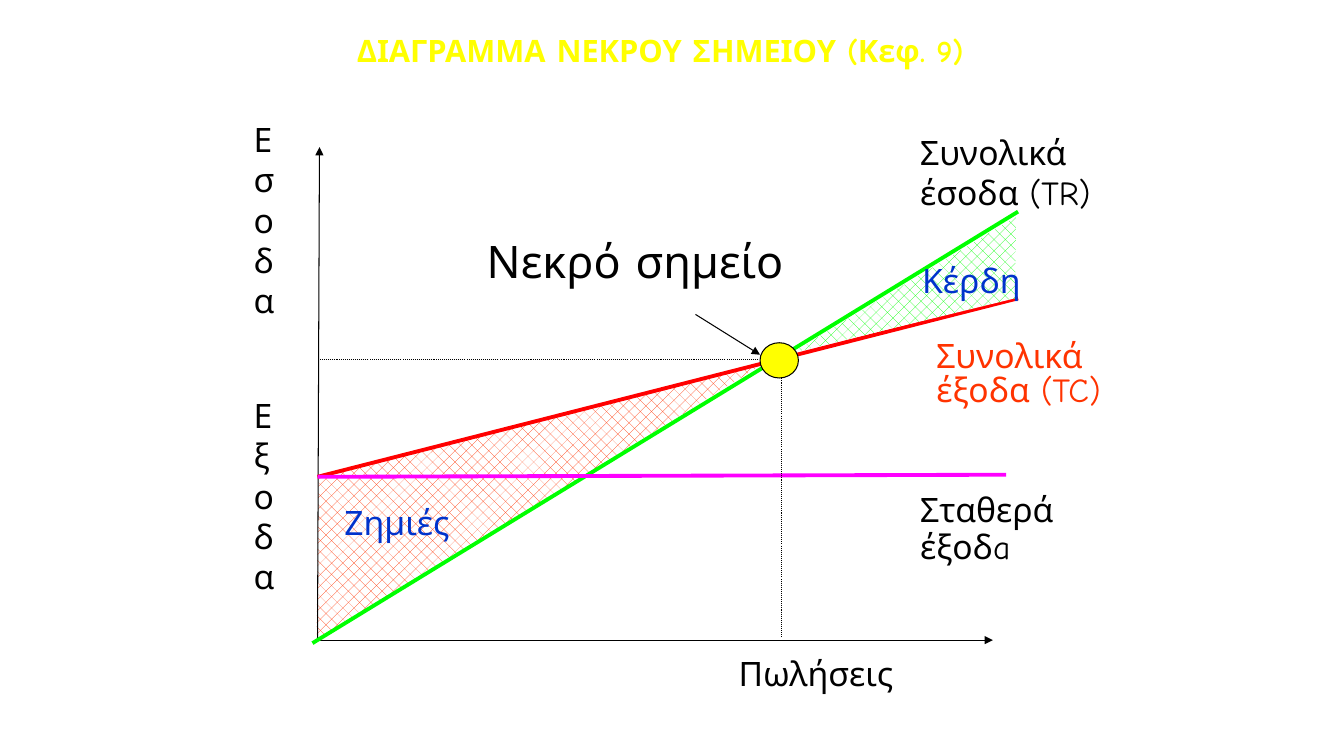
"""Break-even chart slide with revenue, cost and fixed-cost lines."""
from lxml.etree import SubElement
from pptx import Presentation
from pptx.dml.color import RGBColor
from pptx.enum.dml import MSO_LINE, MSO_PATTERN
from pptx.enum.shapes import MSO_CONNECTOR, MSO_SHAPE
from pptx.enum.text import MSO_ANCHOR, MSO_AUTO_SIZE, PP_ALIGN
from pptx.oxml.ns import qn
from pptx.util import Pt

FONT = "Comic Neue"
BLACK, BLUE, YELLOW = "000000", "0033CC", "FFFF00"
RED, GREEN, MAGENTA, ORANGE = "FF0000", "00FF00", "FF00FF", "FF3300"
FRAME_FORMAT = {
    "word_wrap": True,
    "auto_size": MSO_AUTO_SIZE.SHAPE_TO_FIT_TEXT,
    "vertical_anchor": MSO_ANCHOR.TOP,
    "margin_left": Pt(7.2),
    "margin_right": Pt(7.2),
    "margin_top": Pt(3.6),
    "margin_bottom": Pt(3.6),
}


def rgb(hex_value):
    """Turn a hex string into a colour."""
    return RGBColor.from_string(hex_value)


def apply_format(target, values):
    """Set each named attribute on the target."""
    for name, value in values.items():
        setattr(target, name, value)


def place(shape, box):
    """Move and size a shape to a box given in points."""
    edges = ("left", "top", "width", "height")
    apply_format(shape, {edge: Pt(value) for edge, value in zip(edges, box)})


def write(shape, lines, size, color, bold=False, spacing=None, gap=0):
    """Write lines of text, spacing every line after the first."""
    frame = shape.text_frame
    apply_format(frame, FRAME_FORMAT)
    for index, line in enumerate(lines):
        paragraph = frame.add_paragraph() if index else frame.paragraphs[0]
        apply_format(paragraph, {
            "alignment": PP_ALIGN.LEFT,
            "line_spacing": spacing if index else None,
            "space_before": Pt(gap if index else 0),
        })
        run = paragraph.add_run()
        run.text = line
        apply_format(run.font, {"name": FONT, "size": Pt(size), "bold": bold})
        run.font.color.rgb = rgb(color)


def add_title(slide, text, box):
    """Place and fill the title placeholder."""
    title = slide.shapes.title
    place(title, box)
    write(title, [text], 22, YELLOW, bold=True)


def add_label(slide, lines, box, color=BLACK, size=24, **paragraph_format):
    """Add a text label."""
    label = slide.shapes.add_textbox(*map(Pt, box))
    write(label, lines, size, color, **paragraph_format)


def add_line(slide, start, end, color=BLACK, width=0.75, dash=None, arrow=False):
    """Add a straight line, optionally dotted or with an arrowhead."""
    line = slide.shapes.add_connector(
        MSO_CONNECTOR.STRAIGHT, *map(Pt, (*start, *end)))
    line.line.color.rgb = rgb(color)
    apply_format(line.line, {"width": Pt(width), "dash_style": dash})
    if arrow:
        SubElement(line.line._get_or_add_ln(), qn("a:tailEnd"), type="triangle")
    SubElement(line._element.spPr, qn("a:effectLst"))


def add_area(slide, corners, color):
    """Add a hatched area between two lines."""
    first, *rest = [tuple(map(Pt, corner)) for corner in corners]
    builder = slide.shapes.build_freeform(*first)
    builder.add_line_segments(rest, close=True)
    area = builder.convert_to_shape()
    area.shadow.inherit = False
    area.fill.patterned()
    area.fill.pattern = MSO_PATTERN.PERCENT_25
    area.fill.fore_color.rgb = rgb(color)
    area.fill.back_color.rgb = rgb("FFFFFF")
    area.line.fill.background()


def add_marker(slide, box):
    """Add the break-even marker."""
    marker = slide.shapes.add_shape(MSO_SHAPE.OVAL, *map(Pt, box))
    marker.shadow.inherit = False
    marker.fill.solid()
    marker.fill.fore_color.rgb = rgb(YELLOW)
    marker.line.color.rgb = rgb(BLACK)
    marker.line.width = Pt(0.75)


def main():
    """Build and save the slide."""
    deck = Presentation()
    apply_format(deck, {"slide_width": Pt(960), "slide_height": Pt(540)})
    slide = deck.slides.add_slide(deck.slide_layouts[5])
    fixed_cost = (226.8, 340.6)
    break_even = (558, 257)

    add_area(slide, [(227.5, 340.6), (544.3, 260.6), (226.1, 457.9)], ORANGE)
    add_title(slide, "ΔΙΑΓΡΑΜΜΑ ΝΕΚΡΟΥ ΣΗΜΕΙΟΥ (Κεφ. 9)", (247.7, 19.4, 513.4, 33.8))
    add_line(slide, (226.8, 455.8), (228.2, 105.1), arrow=True)
    add_line(slide, (228.2, 457.2), (709.2, 457.2), arrow=True)
    add_label(slide, ["Εσοδα", "Εξοδα"], (174.2, 81.4, 31.7, 356.4), gap=53)
    add_label(slide, ["Πωλήσεις"], (520.6, 463, 223.2, 36))
    add_line(slide, fixed_cost, (727.2, 213.1), RED, 2.75)
    add_line(slide, (223.2, 459.4), (727.2, 151.2), GREEN, 2.75)
    add_label(slide, ["Σταθερά", "έξοδa"], (650.2, 345.6, 126, 63.4),
              spacing=0.3, gap=15)
    add_label(slide, ["Νεκρό σημείο"], (340.6, 163.4, 292.3, 45.4), size=32)
    add_line(slide, (496.8, 224.6), (542.9, 253.4), arrow=True)
    add_label(slide, ["Συνολικά", "έξοδα (TC)"], (661.7, 235.4, 138.2, 61.2),
              ORANGE, spacing=0.2, gap=15)
    add_label(slide, ["Συνολικά έσοδα (TR)"], (650.2, 90.7, 171.4, 65.5))
    add_area(slide, [(565.9, 252), (725.8, 154.8), (725, 213.1)], GREEN)
    add_label(slide, ["Ζημιές"], (239, 355, 98.6, 36), BLUE)
    add_label(slide, ["Κέρδη"], (651.6, 182.2, 98.6, 36), BLUE)
    add_line(slide, fixed_cost, (718.6, 339.1), MAGENTA, 2.75)
    for axis_point in ((558, 455.8), (227.5, 257)):
        add_line(slide, break_even, axis_point, dash=MSO_LINE.ROUND_DOT)
    add_marker(slide, (542.9, 244.8, 27.4, 25.2))
    deck.save("out.pptx")


if __name__ == "__main__":
    main()
